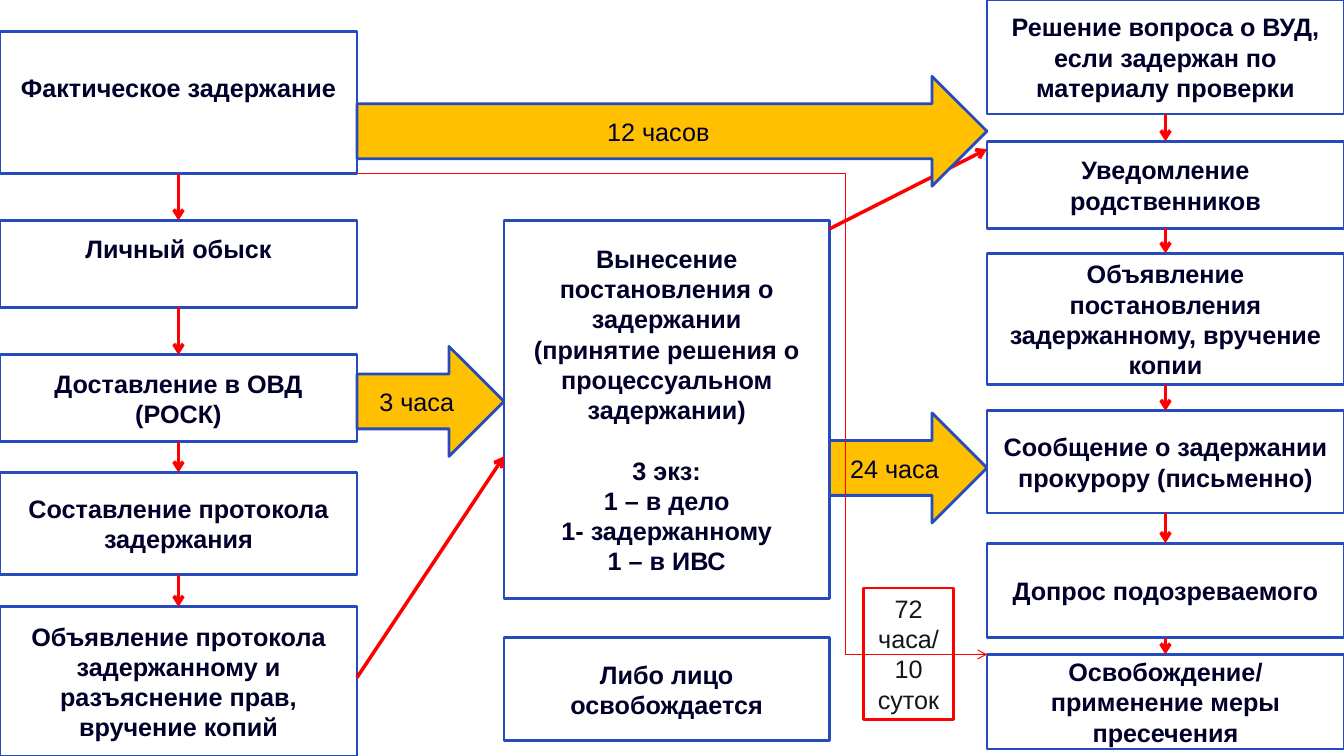
from dataclasses import dataclass

from lxml import etree
from pptx import Presentation
from pptx import util as u
from pptx.dml.color import RGBColor
from pptx.enum import shapes, text
from pptx.oxml.ns import qn

Pt = u.Pt


@dataclass(frozen=True)
class Theme:
    font: str = "Arial"
    size: float = 18
    ink: str = "00002A"
    term_ink: str = "161616"
    white: str = "FFFFFF"
    blue: str = "264BBD"
    amber: str = "FFC000"
    red: str = "FF0000"
    border: float = 2
    arrow: float = 2.5
    thin: float = 0.75


T = Theme()
RECT = shapes.MSO_SHAPE.RECTANGLE
ARROW = shapes.MSO_SHAPE.RIGHT_ARROW
STRAIGHT = shapes.MSO_CONNECTOR.STRAIGHT
LINE = 21.6  # height of one text line

prs = Presentation()
prs.slide_width, prs.slide_height = Pt(960), Pt(540)
s = prs.slides.add_slide(prs.slide_layouts[6])


def add_block(kind, x, y, w, h, lines, fill=T.white, line=T.blue, ink=T.ink, bold=True):
    sp = s.shapes.add_shape(kind, Pt(x), Pt(y), Pt(w), Pt(h))
    sp.shadow.inherit = False
    sp.fill.solid()
    sp.fill.fore_color.rgb = RGBColor.from_string(fill)
    sp.line.color.rgb = RGBColor.from_string(line)
    sp.line.width = Pt(T.border)
    tf = sp.text_frame
    tf.word_wrap = True
    tf.vertical_anchor = text.MSO_ANCHOR.MIDDLE
    for i, words in enumerate(lines):
        p = tf.paragraphs[0] if i == 0 else tf.add_paragraph()
        p.alignment = text.PP_ALIGN.CENTER
        r = p.add_run()
        r.text = words
        r.font.name, r.font.size, r.font.bold = T.font, Pt(T.size), bold
        r.font.color.rgb = RGBColor.from_string(ink)
    return sp


def add_arrow(x1, y1, x2, y2, kind=STRAIGHT, width=T.arrow):
    c = s.shapes.add_connector(kind, Pt(x1), Pt(y1), Pt(x2), Pt(y2))
    c.line.color.rgb = RGBColor.from_string(T.red)
    c.line.width = Pt(width)
    etree.SubElement(c.line._get_or_add_ln(), qn("a:tailEnd"), type="arrow")
    etree.SubElement(c._element.spPr, qn("a:effectLst"))
    return c


SIDE_W, MID_X, MID_W, RIGHT_X = 255, 360, 232.5, 705
MID_END = MID_X + MID_W

left_steps = [
    (22.5, 101.5, ["Фактическое задержание"]),
    (157.5, 62, ["Личный обыск"]),
    (253.5, 62, ["Доставление в ОВД (РОСК)"]),
    (337.5, 73, ["Составление протокола задержания"]),
    (433.5, 106.5, ["Объявление протокола задержанному и разъяснение прав, вручение копий"]),
]
right_steps = [
    (0, 81.5, ["Решение вопроса о ВУД, если задержан по материалу проверки"]),
    (101, 62, ["Уведомление родственников"]),
    (181, 94, ["Объявление постановления задержанному, вручение копии"]),
    (293.5, 73, ["Сообщение о задержании прокурору (письменно)"]),
    (388, 67.5, ["Допрос подозреваемого"]),
    (467.5, 67.5, ["Освобождение/", "применение меры пресечения"]),
]

columns = []
for x, steps in ((0, left_steps), (RIGHT_X, right_steps)):
    columns.append([add_block(RECT, x, y, SIDE_W, h, lines) for y, h, lines in steps])

# The first two steps on the left sit above the middle of their boxes
for box in columns[0][:2]:
    box.text_frame.margin_bottom = Pt(3.6 + LINE)

decision = add_block(RECT, MID_X, 157.5, MID_W, 270, [
    "Вынесение постановления о задержании",
    "(принятие решения о процессуальном задержании)",
    "3 экз:",
    "1 – в дело",
    "1- задержанному",
    "1 – в ИВС",
])
decision.text_frame.paragraphs[2].space_before = Pt(LINE)
add_block(RECT, MID_X, 455.5, MID_W, 73.5, ["Либо лицо освобождается"])

for column in columns:
    for upper, lower in zip(column, column[1:]):
        c = add_arrow(0, 0, 0, 0)
        c.begin_connect(upper, 2)
        c.end_connect(lower, 0)

add_arrow(SIDE_W, 484, MID_X, 326)
add_arrow(MID_END, 163.5, RIGHT_X, 106.5)

for x, y, end, term in (
    (SIDE_W, 247.5, MID_X, "3 часа"),
    (MID_END, 295, RIGHT_X, "24 часа"),
    (SIDE_W, 54.5, RIGHT_X, "12 часов"),
):
    add_block(ARROW, x, y, end - x, 78.5, [term], fill=T.amber, bold=False)

add_block(RECT, 617, 420, 64, 94, ["72 часа/10 суток"], line=T.red, ink=T.term_ink, bold=False)
elbow = add_arrow(SIDE_W, 124, RIGHT_X, 467.5, shapes.MSO_CONNECTOR.ELBOW, T.thin)
guides = elbow._element.spPr.find(qn("a:prstGeom")).get_or_add_avLst()
etree.SubElement(guides, qn("a:gd"), name="adj1", fmla="val 77500")

prs.save("out.pptx")
